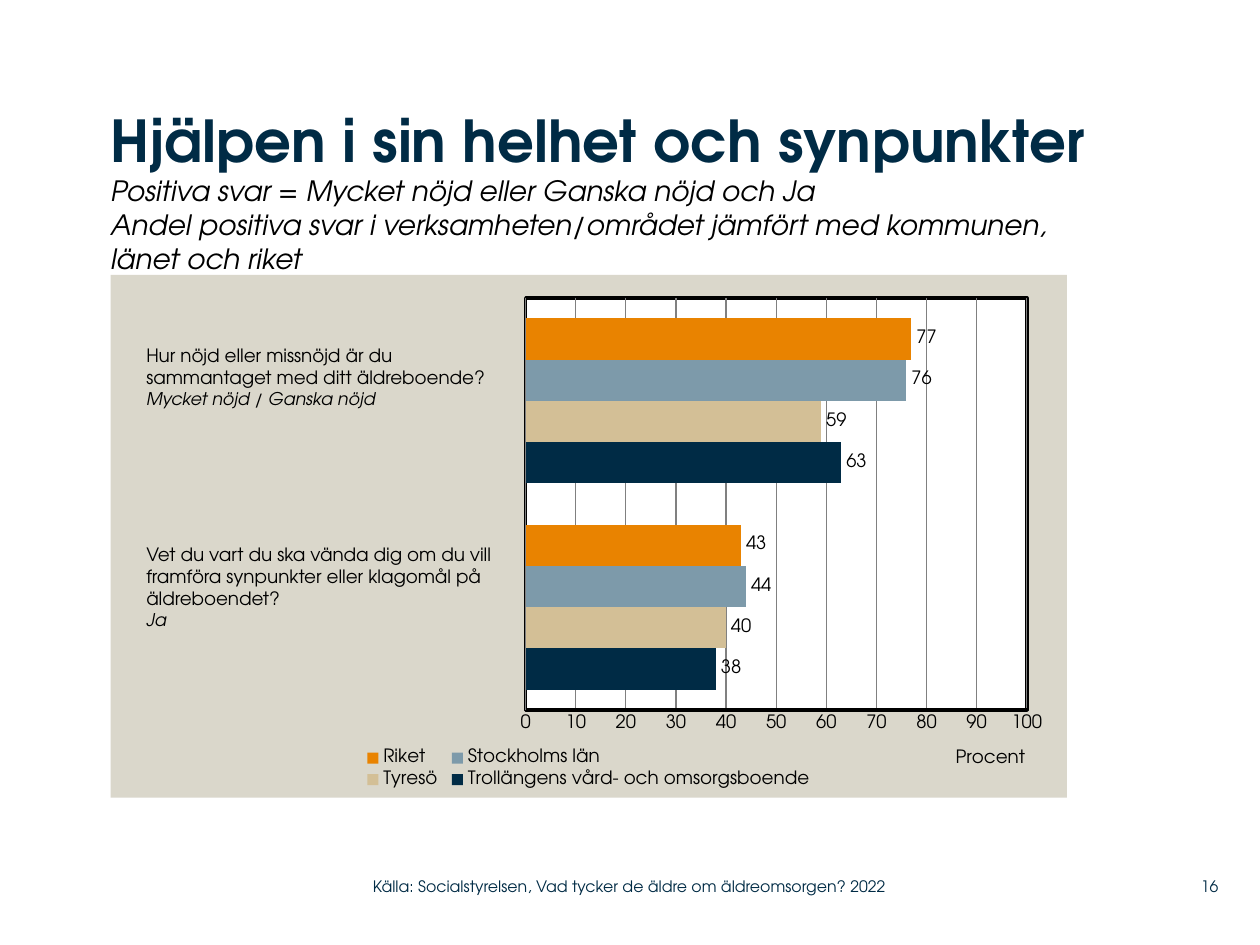
from dataclasses import dataclass
from pptx import Presentation
from pptx import oxml, util as u
from pptx.chart import data
from pptx.dml import color
from pptx.enum import chart as ch, text as tx

FONT = "TeX Gyre Adventor"
NAVY, BLACK = "002B45", "000000"
NS = ('xmlns:c="http://schemas.openxmlformats.org/drawingml/2006/chart" '
      'xmlns:a="http://schemas.openxmlformats.org/drawingml/2006/main"')


@dataclass
class Line:
    text: str
    size: float
    color: str = BLACK
    bold: bool = False
    italic: bool = False


@dataclass
class Box:
    left: float
    top: float
    width: float
    height: float
    lines: list[Line]
    inset: bool = False
    middle: bool = False
    right: bool = False


@dataclass
class Series:
    name: str
    values: tuple[int, int]
    color: str


TITLE = Box(2.23, 2.11, 19.79, 3.4, [
    Line("Hjälpen i sin helhet och synpunkter", 33, NAVY, bold=True),
    Line("Positiva svar = Mycket nöjd eller Ganska nöjd och Ja", 16, italic=True),
    Line("Andel positiva svar i verksamheten/området jämfört med kommunen, "
         "länet och riket", 16, italic=True)])
LABELS = [
    Box(2.7, 6.81, 7.87, 2.06, [
        Line("Hur nöjd eller missnöjd är du", 10.5),
        Line("sammantaget med ditt äldreboende?", 10.5),
        Line("Mycket nöjd / Ganska nöjd", 10, italic=True)], inset=True),
    Box(2.7, 10.82, 7.75, 2.06, [
        Line("Vet du vart du ska vända dig om du vill framföra synpunkter "
             "eller klagomål på äldreboendet?", 10.5),
        Line("Ja", 10, italic=True)], inset=True)]
FOOTER = [
    Box(7.52, 17.5, 11.25, 0.74, [
        Line("Källa: Socialstyrelsen, Vad tycker de äldre om äldreomsorgen? 2022",
             9, NAVY)], middle=True),
    Box(23.37, 17.5, 1.19, 0.74, [Line("16", 9, NAVY)], middle=True, right=True)]
SERIES = [
    Series("Trollängens vård- och omsorgsboende", (38, 63), NAVY),
    Series("Tyresö", (40, 59), "D3BF96"),
    Series("Stockholms län", (44, 76), "7D9AAA"),
    Series("Riket", (43, 77), "E98300")]


def rgb(code: str) -> color.RGBColor:
    return color.RGBColor.from_string(code)


def style(font, size: float, code: str = BLACK, bold=False, italic=False) -> None:
    font.name, font.size, font.bold, font.italic = FONT, u.Pt(size), bold, italic
    font.color.rgb = rgb(code)


def add_text(slide, box: Box) -> None:
    shape = slide.shapes.add_textbox(
        *map(u.Cm, (box.left, box.top, box.width, box.height)))
    frame = shape.text_frame
    frame.word_wrap = True
    if not box.inset:
        frame.margin_left = frame.margin_right = 0
        frame.margin_top = frame.margin_bottom = 0
    if box.middle:
        frame.vertical_anchor = tx.MSO_ANCHOR.MIDDLE
    for i, line in enumerate(box.lines):
        para = frame.add_paragraph() if i else frame.paragraphs[0]
        para.text = line.text
        para.alignment = tx.PP_ALIGN.RIGHT if box.right else tx.PP_ALIGN.LEFT
        style(para.font, line.size, line.color, line.bold, line.italic)


def place(node, index: int, inner: bool = False, **spots: float) -> None:
    """Give a chart part a manual layout, in fractions of the chart."""
    for old in node.findall("{*}layout"):
        node.remove(old)
    target = '<c:layoutTarget val="inner"/>' if inner else ""
    modes = "".join(f'<c:{k}Mode val="edge"/>' for k in spots if k in "xy")
    vals = "".join(f'<c:{k} val="{v}"/>' for k, v in spots.items())
    node.insert(index, oxml.parse_xml(
        f"<c:layout {NS}><c:manualLayout>{target}{modes}{vals}"
        "</c:manualLayout></c:layout>"))


def area(fill: str, line: str):
    """Return shape properties with a solid fill and the given outline."""
    return oxml.parse_xml(
        f'<c:spPr {NS}><a:solidFill><a:srgbClr val="{fill}"/></a:solidFill>'
        f"{line}</c:spPr>")


def add_chart(slide) -> None:
    table = data.CategoryChartData()
    table.categories = ["1", "2"]
    for item in SERIES:
        table.add_series(item.name, item.values)
    chart = slide.shapes.add_chart(
        ch.XL_CHART_TYPE.BAR_CLUSTERED,
        *map(u.Cm, (2.23, 5.54, 19.28, 10.54)), table).chart
    style(chart.font, 10.5)
    chart.has_title = False

    plot = chart.plots[0]
    plot.gap_width, plot.overlap, plot.vary_by_categories = 100, 0, False
    for bars, item in zip(plot.series, SERIES):
        bars.format.fill.solid()
        bars.format.fill.fore_color.rgb = rgb(item.color)
        labels = bars.data_labels
        labels.show_value = True
        labels.position = ch.XL_LABEL_POSITION.OUTSIDE_END
        style(labels.font, 10.5)

    chart.category_axis.visible = False
    axis = chart.value_axis
    axis.minimum_scale, axis.maximum_scale, axis.major_unit = 0, 100, 10
    axis.major_tick_mark = axis.minor_tick_mark = ch.XL_TICK_MARK.NONE
    axis.has_major_gridlines = True
    grid = axis.major_gridlines.format.line
    for line, code, width in ((axis.format.line, BLACK, 2), (grid, "808080", 0.75)):
        line.color.rgb, line.width = rgb(code), u.Pt(width)
    style(axis.tick_labels.font, 10.5)
    para = axis.axis_title.text_frame.paragraphs[0]
    para.text = "Procent"
    style(para.font, 10.5)
    place(axis.axis_title._element, 1, x=0.88, y=0.9)

    chart.has_legend = True
    legend = chart.legend
    legend.position = ch.XL_LEGEND_POSITION.BOTTOM
    legend.include_in_layout = False
    style(legend.font, 10.5)
    place(legend._element, 1, x=0.26, y=0.9, w=0.48, h=0.09)

    root = chart._chartSpace
    body = root.find("{*}chart")
    inside = body.find("{*}plotArea")
    place(inside, 0, inner=True, x=0.434, y=0.044, w=0.524, h=0.789)
    inside.append(area("FFFFFF", f'<a:ln w="{u.Pt(2)}"><a:solidFill>'
                       f'<a:srgbClr val="{BLACK}"/></a:solidFill></a:ln>'))
    body.addnext(area("DAD7CB", "<a:ln><a:noFill/></a:ln>"))


def main() -> None:
    deck = Presentation()
    deck.slide_width, deck.slide_height = u.Cm(25.4), u.Cm(19.05)
    slide = deck.slides.add_slide(deck.slide_layouts[6])
    add_text(slide, TITLE)
    add_chart(slide)
    for box in LABELS + FOOTER:
        add_text(slide, box)
    deck.save("out.pptx")


if __name__ == "__main__":
    main()
